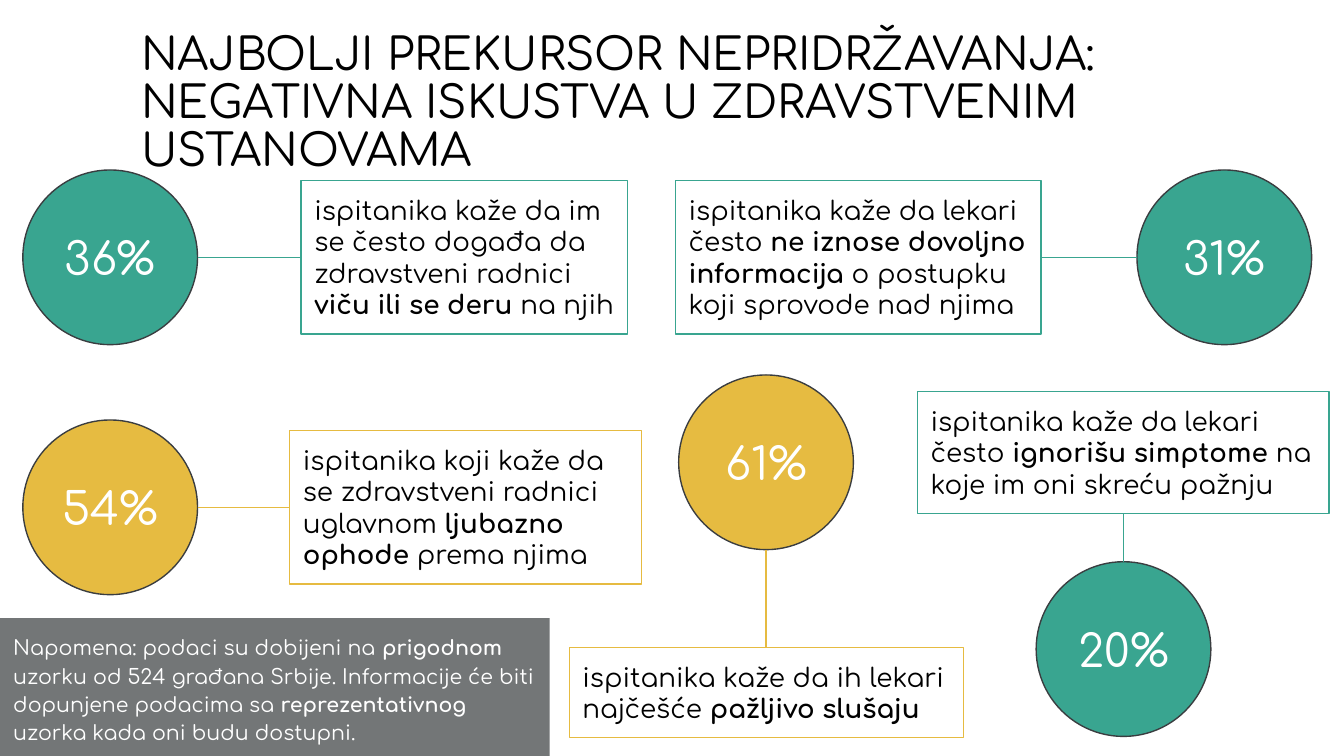
import pptx
import pptx.dml.color
import pptx.enum.shapes
import pptx.enum.text
import pptx.oxml
import pptx.oxml.ns
import pptx.util

RGBColor = pptx.dml.color.RGBColor
MSO_SHAPE = pptx.enum.shapes.MSO_SHAPE
MSO_ANCHOR = pptx.enum.text.MSO_ANCHOR
MSO_AUTO_SIZE = pptx.enum.text.MSO_AUTO_SIZE
PP_ALIGN = pptx.enum.text.PP_ALIGN

GREEN = RGBColor(0x39, 0xA5, 0x90)
YELLOW = RGBColor(0xE6, 0xBB, 0x41)
GREY = RGBColor(0x73, 0x76, 0x77)
OUTLINE = RGBColor(0x3A, 0x3D, 0x40)
BLACK = RGBColor(0, 0, 0)
WHITE = RGBColor(255, 255, 255)

PX = 4572  # 200 px to the inch
FONT = "Comfortaa"
LINE_WIDTH = pptx.util.Pt(0.75)
DIAMETER = 260


def write_text(shape, text, size, color, frame_format, paragraph_format):
    """Fill the shape with one paragraph; parts between ** are bold."""
    frame = shape.text_frame
    margins = dict(margin_left=20 * PX, margin_top=20 * PX,
                   margin_right=18 * PX, margin_bottom=20 * PX)
    for name, value in {"word_wrap": True, **margins, **frame_format}.items():
        setattr(frame, name, value)
    paragraph = frame.paragraphs[0]
    for name, value in paragraph_format.items():
        setattr(paragraph, name, value)
    for index, part in enumerate(text.split("**")):
        if part:
            run = paragraph.add_run()
            run.text = part
            font_format = {"name": FONT, "size": pptx.util.Pt(size), "bold": index % 2 == 1}
            for name, value in font_format.items():
                setattr(run.font, name, value)
            run.font.color.rgb = color


def add_shape(kind, bounds, fill, outline):
    shape = slide.shapes.add_shape(kind, *(length * PX for length in bounds))
    shape.shadow.inherit = False
    if fill is None:
        shape.fill.background()
    else:
        shape.fill.solid()
        shape.fill.fore_color.rgb = fill
    if outline is None:
        shape.line.fill.background()
    else:
        shape.line.color.rgb = outline
        shape.line.width = LINE_WIDTH
    return shape


presentation = pptx.Presentation()
presentation.slide_width = 2000 * PX
presentation.slide_height = 1125 * PX
slide = presentation.slides.add_slide(presentation.slide_layouts[5])

top_format = {"vertical_anchor": MSO_ANCHOR.TOP, "auto_size": MSO_AUTO_SIZE.NONE}
box_format = {"vertical_anchor": MSO_ANCHOR.TOP, "auto_size": MSO_AUTO_SIZE.SHAPE_TO_FIT_TEXT}
circle_format = {"vertical_anchor": MSO_ANCHOR.MIDDLE, "margin_right": 20 * PX}

title = slide.shapes.title
title_place = {"left": 190, "top": 28, "width": 1788, "height": 188}
for name, value in title_place.items():
    setattr(title, name, value * PX)
write_text(title,
           "NAJBOLJI PREKURSOR NEPRIDRŽAVANJA: NEGATIVNA ISKUSTVA U ZDRAVSTVENIM USTANOVAMA",
           23.8, BLACK, top_format, {"alignment": PP_ALIGN.LEFT, "line_spacing": 0.9})

# share, colour, circle corner, box bounds, side of the circle that faces the box, text
findings = [
    ("36%", GREEN, (34, 253), (448, 269, 486, 228), "right",
     "ispitanika kaže da im se često događa da zdravstveni radnici **viču ili se deru** na njih"),
    ("20%", GREEN, (1542, 836), (1365, 583, 613, 181), "top",
     "ispitanika kaže da lekari često **ignorišu simptome** na koje im oni skreću pažnju"),
    ("54%", YELLOW, (34, 625), (431, 641, 524, 228), "right",
     "ispitanika koji kaže da se zdravstveni radnici uglavnom **ljubazno ophode** prema njima"),
    ("61%", YELLOW, (1010, 558), (847, 964, 587, 134), "bottom",
     "ispitanika kaže da ih lekari najčešće **pažljivo slušaju**"),
    ("31%", GREEN, (1692, 253), (1005, 269, 544, 228), "left",
     "ispitanika kaže da lekari često **ne iznose dovoljno informacija** o postupku "
     "koji sprovode nad njima"),
]
for share, color, corner, bounds, side, text in findings:
    circle = add_shape(MSO_SHAPE.OVAL, (*corner, DIAMETER, DIAMETER), color, OUTLINE)
    write_text(circle, share, 24, WHITE, circle_format, {"alignment": PP_ALIGN.CENTER})
    box = add_shape(MSO_SHAPE.RECTANGLE, bounds, None, color)
    write_text(box, text, 14, BLACK, box_format, {"alignment": PP_ALIGN.LEFT})

    x, y = corner
    left, top, width, height = bounds
    middle_x, middle_y = x + DIAMETER // 2, y + DIAMETER // 2
    ends = {
        "right": (x + DIAMETER, middle_y, left, middle_y),
        "left": (left + width, middle_y, x, middle_y),
        "top": (middle_x, y, middle_x, top + height),
        "bottom": (middle_x, y + DIAMETER, middle_x, top),
    }[side]
    connector = slide.shapes.add_connector(
        pptx.enum.shapes.MSO_CONNECTOR.STRAIGHT, *(length * PX for length in ends))
    connector.line.color.rgb = color
    connector.line.width = LINE_WIDTH
    properties = connector._element.spPr
    properties.append(pptx.oxml.parse_xml(
        f'<a:effectLst {pptx.oxml.ns.nsdecls("a")}/>'))

note = add_shape(MSO_SHAPE.RECTANGLE, (0, 920, 818, 205), GREY, None)
write_text(note,
           "Napomena: podaci su dobijeni na **prigodnom **uzorku od 524 građana Srbije. "
           "Informacije će biti dopunjene podacima sa **reprezentativnog **"
           "uzorka kada oni budu dostupni.",
           11, WHITE, box_format, {"alignment": PP_ALIGN.LEFT, "line_spacing": 1.15})

presentation.save("out.pptx")
